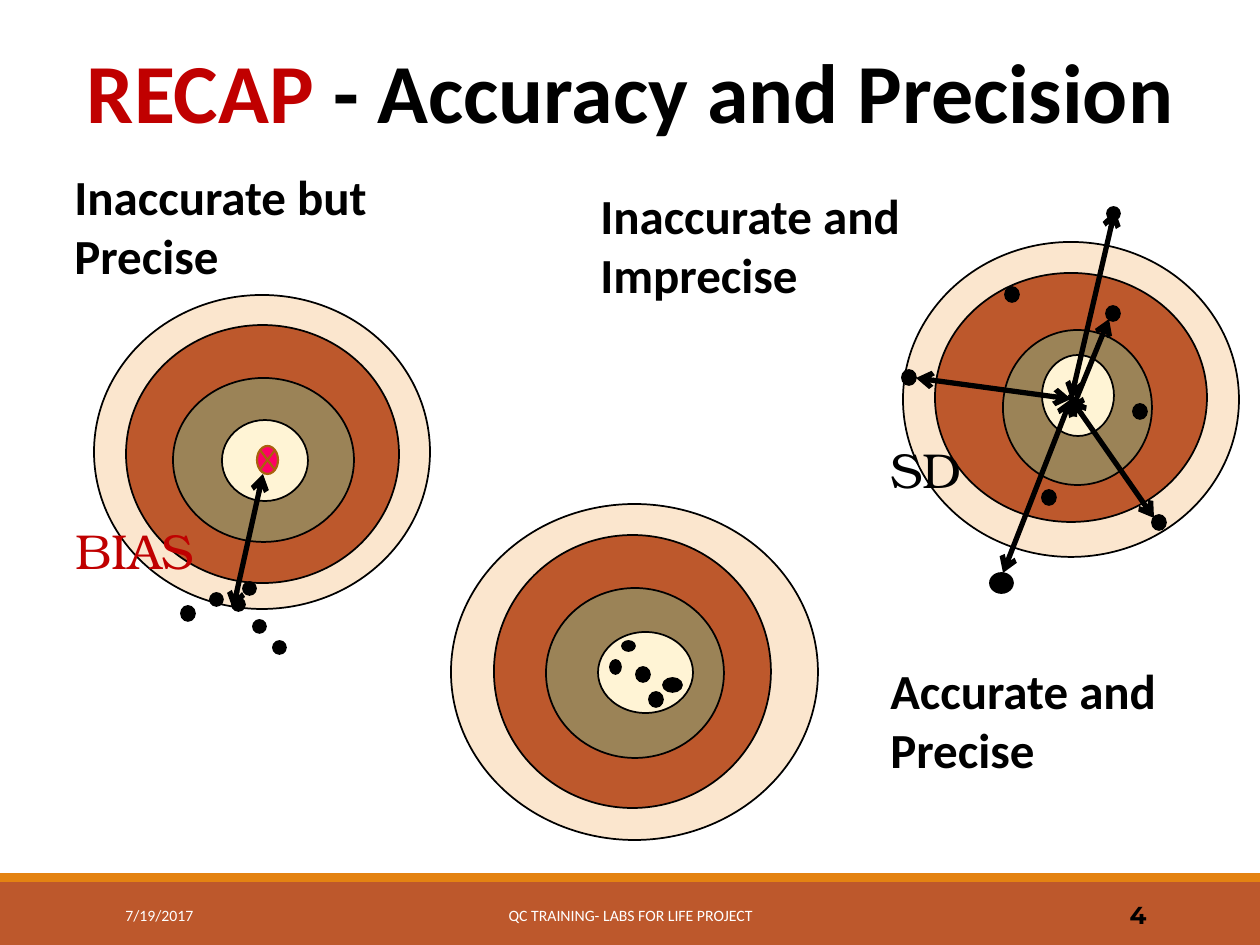
from pptx import Presentation
from pptx.dml.color import RGBColor
from pptx.enum.shapes import MSO_CONNECTOR, MSO_SHAPE
from pptx.enum.text import MSO_ANCHOR, PP_ALIGN
from pptx.oxml.ns import qn
from pptx.util import Pt
from lxml import etree

OVAL = MSO_SHAPE.OVAL
RECT = MSO_SHAPE.RECTANGLE
JUNCTION = MSO_SHAPE.FLOWCHART_SUMMING_JUNCTION
STRAIGHT = MSO_CONNECTOR.STRAIGHT
TOP, MIDDLE = MSO_ANCHOR.TOP, MSO_ANCHOR.MIDDLE
LEFT, CENTER, RIGHT = PP_ALIGN.LEFT, PP_ALIGN.CENTER, PP_ALIGN.RIGHT

EMU_PER_PX = 914400 / 126
COLORS = {
    "black": "000000", "white": "FFFFFF", "red": "C00000",
    "rust": "BD582C", "orange": "E48312", "peach": "FBE6CE",
    "olive": "9B8357", "cream": "FFF4D5", "pink": "FF0066", "brown": "A9610D",
}
RINGS = ["peach", "rust", "olive", "cream"]
TARGETS = [
    [(94, 295, 336, 314), (126, 325, 273, 258), (173, 378, 181, 164), (222, 420, 86, 81)],
    [(451, 504, 367, 336), (494, 535, 277, 273), (546, 588, 178, 170), (598, 632, 95, 81)],
    [(903, 242, 336, 315), (935, 273, 272, 249), (1003, 330, 149, 155), (1042, 355, 72, 81)],
]
SMALL_DOTS = [(210, 593), (243, 582), (232, 598), (253, 620), (273, 641), (1107, 207)]
LARGE_DOTS = [(181, 606), (636, 667), (649, 692), (1152, 515), (1042, 490),
              (1106, 306), (1005, 287), (1133, 404), (902, 370)]
ODD_DOTS = [(663, 678, 19, 14), (622, 641, 13, 10), (610, 660, 11, 14), (990, 573, 23, 20)]
ARROWS = [
    ((263, 474), (233, 609)),
    ((1071, 399), (1003, 573)),
    ((916, 378), (1071, 399)),
    ((1115, 210), (1071, 399)),
    ((1109, 319), (1071, 412)),
    ((1071, 399), (1154, 518)),
]
HEADINGS = [
    ("Inaccurate but Precise", (62, 160, 462, 131)),
    ("Inaccurate and Imprecise", (588, 179, 359, 131)),
    ("Accurate and Precise", (878, 654, 329, 131)),
]


def px(n):
    return round(n * EMU_PER_PX)


def color(name):
    return RGBColor.from_string(COLORS[name])


def add_shape(s, kind, box, fill, line=None, width=1):
    sp = s.shapes.add_shape(kind, *map(px, box))
    sp.shadow.inherit = False
    sp.fill.solid()
    sp.fill.fore_color.rgb = color(fill)
    if line:
        sp.line.color.rgb = color(line)
        sp.line.width = Pt(width)
    else:
        sp.line.fill.background()


def add_target(s, rings):
    for box, fill in zip(rings, RINGS):
        add_shape(s, OVAL, box, fill, "black")


def add_text(s, box, runs, size, font="Calibri", bold=False, align=LEFT,
             anchor=TOP, wrap=True, inset=True):
    tf = s.shapes.add_textbox(*map(px, box)).text_frame
    tf.word_wrap = wrap
    tf.vertical_anchor = anchor
    if not inset:
        tf.margin_left = tf.margin_top = tf.margin_right = tf.margin_bottom = 0
    p = tf.paragraphs[0]
    p.alignment = align
    for text, name in runs:
        r = p.add_run()
        r.text = text
        r.font.name = font
        r.font.size = Pt(size)
        r.font.bold = bold
        r.font.color.rgb = color(name)


def add_arrow(s, start, end):
    c = s.shapes.add_connector(STRAIGHT, *map(px, start + end))
    c.line.color.rgb = color("black")
    c.line.width = Pt(3)
    ln = c.line._get_or_add_ln()
    for tag in ("a:headEnd", "a:tailEnd"):
        etree.SubElement(ln, qn(tag), type="arrow")
    etree.SubElement(c._element.spPr, qn("a:effectLst"))


def add_footer(s):
    add_shape(s, RECT, (0, 882, 1260, 63), "rust")
    add_shape(s, RECT, (0, 873, 1260, 9), "orange")
    add_text(s, (113, 890, 256, 50), [("7/19/2017", "white")], 9, anchor=MIDDLE)
    add_text(s, (381, 890, 499, 50), [("QC TRAINING- LABS FOR LIFE PROJECT", "white")],
             9, align=CENTER, anchor=MIDDLE)
    add_text(s, (1023, 890, 136, 50), [("4", "black")], 14, "Montserrat", True,
             RIGHT, MIDDLE)


def main():
    prs = Presentation()
    prs.slide_width, prs.slide_height = px(1260), px(945)
    s = prs.slides.add_slide(prs.slide_layouts[6])
    add_footer(s)
    add_text(s, (87, 40, 1099, 102),
             [("RECAP", "red"), (" - Accuracy and Precision", "black")],
             48, bold=True, wrap=False, inset=False)
    for rings in TARGETS:
        add_target(s, rings)
    dots = [(x, y, 13, 13) for x, y in SMALL_DOTS]
    dots += [(x, y, 14, 15) for x, y in LARGE_DOTS]
    for box in dots + ODD_DOTS:
        add_shape(s, OVAL, box, "black", "black")
    for text, box in HEADINGS:
        add_text(s, box, [(text, "black")], 28, bold=True)
    add_text(s, (63, 514, 164, 72), [("BIAS", "red")], 28, "TeX Gyre Bonum")
    add_text(s, (878, 433, 112, 72), [("SD", "black")], 28, "TeX Gyre Bonum")
    for start, end in ARROWS:
        add_arrow(s, start, end)
    add_shape(s, JUNCTION, (257, 446, 21, 28), "pink", "brown", 1.25)
    prs.save("out.pptx")


if __name__ == "__main__":
    main()
